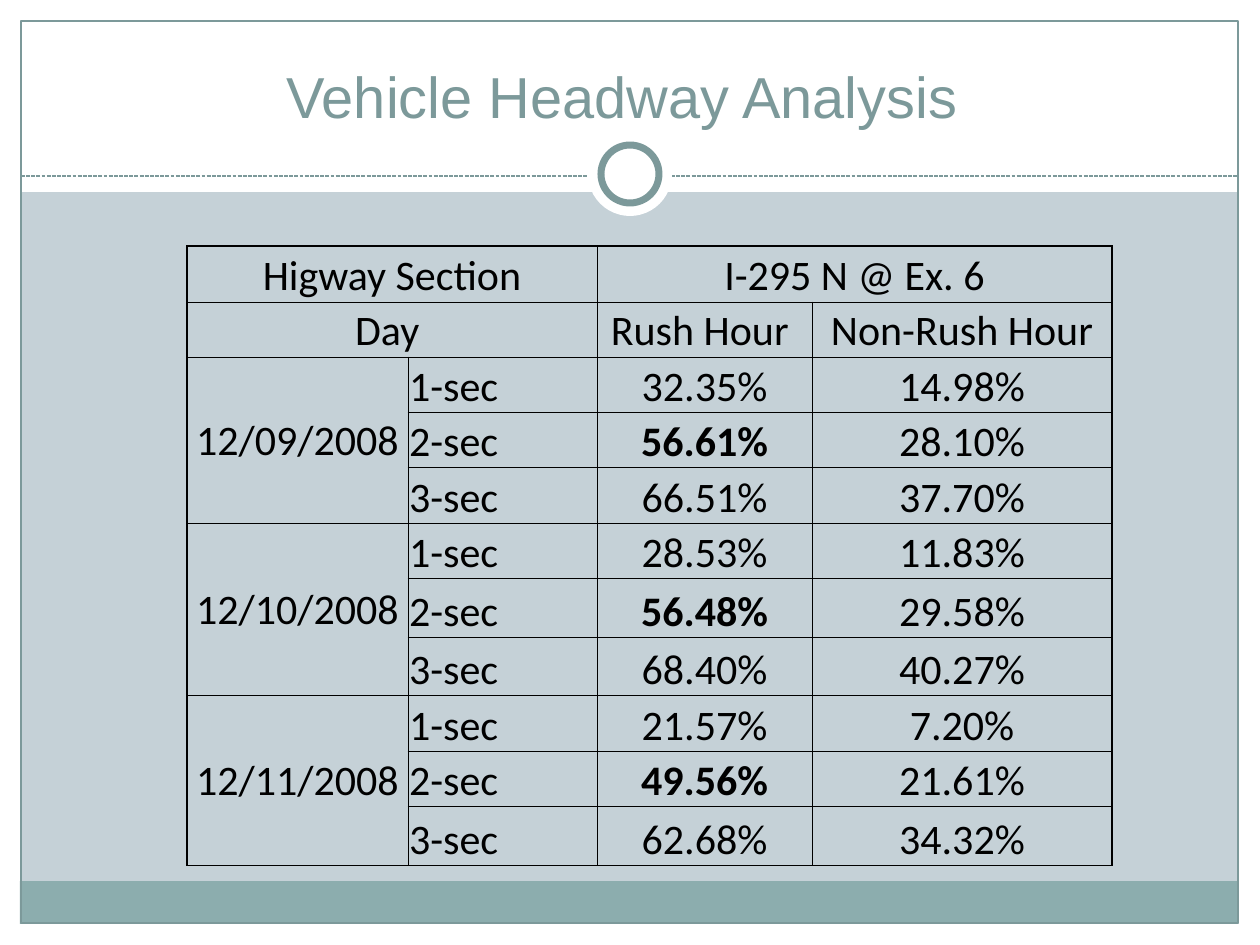
from dataclasses import dataclass
from typing import Optional

import pptx
import pptx.dml.color
import pptx.enum.dml
import pptx.enum.shapes
import pptx.enum.text
import pptx.oxml
import pptx.oxml.ns
import pptx.util

SCALE = 914400 / 126  # EMU in one px
WHITE, TEAL, SEA, MIST, BLACK = "FFFFFF", "7C999A", "8CADAE", "C5D1D7", "000000"
Kind = pptx.enum.shapes.MSO_SHAPE
Align = pptx.enum.text.PP_ALIGN
Anchor = pptx.enum.text.MSO_ANCHOR


@dataclass
class Decor:
    kind: int
    box: tuple
    fill: Optional[str] = None
    line: Optional[str] = None
    weight: float = 0.75


# Frame around the slide, drawn below and above the dotted divider
FRAME = [
    Decor(Kind.RECTANGLE, (0, 924, 1260, 21), WHITE),
    Decor(Kind.RECTANGLE, (0, 0, 1260, 192), WHITE),
    Decor(Kind.RECTANGLE, (0, 0, 21, 945), WHITE),
    Decor(Kind.RECTANGLE, (1239, 0, 21, 945), WHITE),
    Decor(Kind.RECTANGLE, (20, 881, 1218, 43), SEA),
    Decor(Kind.RECTANGLE, (21, 21, 1217, 902), None, TEAL),
]
RINGS = [
    Decor(Kind.OVAL, (588, 132, 84, 84), WHITE),
    Decor(Kind.OVAL, (601, 145, 58, 58), WHITE, TEAL, 4),
]

# Share of vehicles per day: rush hour, non-rush hour for 1, 2 and 3 seconds
HEADWAYS = {
    "12/09/2008": [("32.35%", "14.98%"), ("56.61%", "28.10%"), ("66.51%", "37.70%")],
    "12/10/2008": [("28.53%", "11.83%"), ("56.48%", "29.58%"), ("68.40%", "40.27%")],
    "12/11/2008": [("21.57%", "7.20%"), ("49.56%", "21.61%"), ("62.68%", "34.32%")],
}
TABLE_LEFT, TABLE_TOP = 187, 246
COLUMN_WIDTHS = [221, 189, 215, 300]
ROW_HEIGHTS = [56, 55, 56, 55, 56, 55, 59, 58, 56, 55, 59]


def px(length: int) -> pptx.util.Emu:
    return pptx.util.Emu(round(length * SCALE))


def color(value: str) -> pptx.dml.color.RGBColor:
    return pptx.dml.color.RGBColor.from_string(value)


def apply(target, formats: dict) -> None:
    for name, value in formats.items():
        setattr(target, name, value)


def write(frame, text: str, size: int, font: str, ink: str,
          align=Align.CENTER, bold: bool = False) -> None:
    paragraph = frame.paragraphs[0]
    paragraph.alignment = align
    run = paragraph.add_run()
    run.text = text
    apply(run.font, {"size": pptx.util.Pt(size), "name": font, "bold": bold})
    run.font.color.rgb = color(ink)


def draw_decor(slide, decor: Decor) -> None:
    shape = slide.shapes.add_shape(decor.kind, *map(px, decor.box))
    shape.shadow.inherit = False
    if decor.fill:
        shape.fill.solid()
        shape.fill.fore_color.rgb = color(decor.fill)
    else:
        shape.fill.background()
    if decor.line:
        shape.line.color.rgb = color(decor.line)
        shape.line.width = pptx.util.Pt(decor.weight)
    else:
        shape.line.fill.background()


def draw_divider(slide) -> None:
    divider = slide.shapes.add_connector(
        pptx.enum.shapes.MSO_CONNECTOR.STRAIGHT, px(21), px(176), px(1239), px(176))
    apply(divider.line, {"width": pptx.util.Pt(0.75),
                         "dash_style": pptx.enum.dml.MSO_LINE.SQUARE_DOT})
    divider.line.color.rgb = color(TEAL)
    # The preset dash is set to the short system dash
    dash = divider.line._ln.find(pptx.oxml.ns.qn("a:prstDash"))
    dash.set("val", "sysDash")
    divider._element.spPr.append(pptx.oxml.parse_xml(
        f"<a:effectLst {pptx.oxml.ns.nsdecls('a')}/>"))


def draw_title(slide, text: str) -> None:
    title = slide.shapes.title
    apply(title, {"left": px(42), "top": px(32), "width": px(1176), "height": px(104)})
    apply(title.text_frame, {"vertical_anchor": Anchor.BOTTOM, "word_wrap": True,
                             "auto_size": pptx.enum.text.MSO_AUTO_SIZE.NONE})
    write(title.text_frame, text, 33, "Arial", TEAL)
    slide.shapes._spTree.append(title._element)  # in front of the frame


def draw_borders(cell, row: int, column: int) -> None:
    last_row = row + cell.span_height if cell.is_merge_origin else row + 1
    last_column = column + cell.span_width if cell.is_merge_origin else column + 1
    outer = {"lnL": column == 0, "lnR": last_column == len(COLUMN_WIDTHS),
             "lnT": row == 0, "lnB": last_row == len(ROW_HEIGHTS)}
    properties = cell._tc.get_or_add_tcPr()
    for side, is_outer in outer.items():
        width = pptx.util.Pt(1 if is_outer else 0.5)
        properties.append(pptx.oxml.parse_xml(
            f'<a:{side} {pptx.oxml.ns.nsdecls("a")} w="{width}"><a:solidFill>'
            f'<a:srgbClr val="{BLACK}"/></a:solidFill></a:{side}>'))


def draw_table(slide) -> None:
    # Rows of text; None continues a merged cell
    rows = [["Higway Section", None, "I-295 N @ Ex. 6", None],
            ["Day ", None, "Rush Hour ", "Non-Rush Hour"]]
    for day, shares in HEADWAYS.items():
        for seconds, (rush, non_rush) in enumerate(shares, 1):
            rows.append([day if seconds == 1 else None, f"{seconds}-sec", rush, non_rush])

    table = slide.shapes.add_table(
        len(rows), len(COLUMN_WIDTHS), px(TABLE_LEFT), px(TABLE_TOP),
        px(sum(COLUMN_WIDTHS)), px(sum(ROW_HEIGHTS))).table
    apply(table, {"first_row": False, "horz_banding": False})
    for column, width in zip(table.columns, COLUMN_WIDTHS):
        column.width = px(width)
    for row, height in zip(table.rows, ROW_HEIGHTS):
        row.height = px(height)

    # Headings span two columns, days span three rows
    for row, column in [(0, 0), (0, 2), (1, 0)]:
        table.cell(row, column).merge(table.cell(row, column + 1))
    for row in range(2, len(rows), 3):
        table.cell(row, 0).merge(table.cell(row + 2, 0))

    for row, texts in enumerate(rows):
        for column, text in enumerate(texts):
            cell = table.cell(row, column)
            if text is not None:
                is_day = row > 1 and column == 0
                is_label = row > 1 and column == 1
                is_two_second_rush = column == 2 and texts[1] == "2-sec"
                apply(cell, {"margin_left": px(1), "margin_right": px(1),
                             "margin_top": px(1), "margin_bottom": 0,
                             "vertical_anchor": Anchor.MIDDLE if is_day else Anchor.BOTTOM})
                write(cell.text_frame, text, 24, "Calibri", BLACK,
                      Align.LEFT if is_label else Align.CENTER, is_two_second_rush)
                draw_borders(cell, row, column)
            cell.fill.background()


def main() -> None:
    deck = pptx.Presentation()
    apply(deck, {"slide_width": px(1260), "slide_height": px(945)})
    slide = deck.slides.add_slide(deck.slide_layouts[5])
    slide.background.fill.solid()
    slide.background.fill.fore_color.rgb = color(MIST)

    for decor in FRAME:
        draw_decor(slide, decor)
    draw_divider(slide)
    for decor in RINGS:
        draw_decor(slide, decor)
    draw_title(slide, "Vehicle Headway Analysis ")
    draw_table(slide)
    deck.save("out.pptx")


if __name__ == "__main__":
    main()
